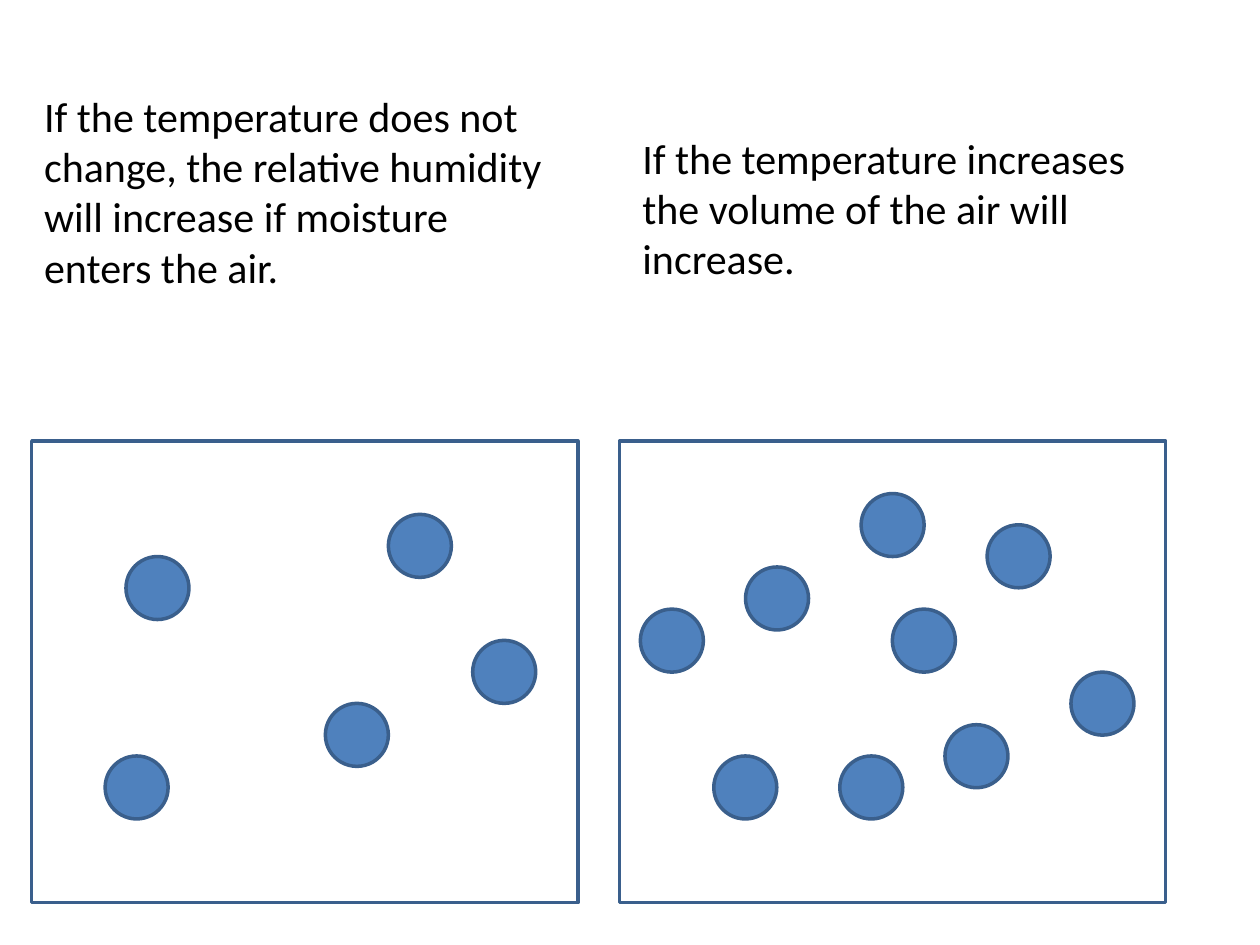
from dataclasses import dataclass

import pptx
import pptx.dml.color
import pptx.enum.shapes
import pptx.enum.text
import pptx.util

Cm = pptx.util.Cm
Pt = pptx.util.Pt
Kind = pptx.enum.shapes.MSO_SHAPE


@dataclass(frozen=True)
class Theme:
    fill: str = "4F81BD"
    edge: str = "3A5F8C"
    ink: str = "000000"
    font: str = "Calibri"
    size: int = 24
    width: int = 2


@dataclass(frozen=True)
class Panel:
    left: float
    drops: tuple[tuple[float, float], ...]


@dataclass(frozen=True)
class Note:
    left: float
    top: float
    height: float
    text: str


THEME = Theme()
BOX_TOP, BOX_WIDTH, BOX_HEIGHT = 8.89, 11.01, 9.31
DROP = 1.27
NOTE_WIDTH = 10.8

PANELS = (
    Panel(0.64, ((2.54, 11.22), (9.53, 12.91), (7.83, 10.37),
                 (2.12, 15.24), (6.56, 14.18))),
    Panel(12.49, ((19.9, 10.58), (14.39, 15.24), (21.59, 13.55),
                  (19.05, 14.61), (15.03, 11.43), (17.36, 9.95),
                  (16.93, 15.24), (17.99, 12.28), (12.91, 12.28))),
)
NOTES = (
    Note(0.64, 1.69, 4.37,
         "If the temperature does not change, the relative humidity "
         "will increase if moisture enters the air."),
    Note(12.7, 2.54, 3.33,
         "If the temperature increases the volume of the air will increase."),
)


def color(code: str) -> pptx.dml.color.RGBColor:
    return pptx.dml.color.RGBColor.from_string(code)


def draw_shape(slide, kind, left: float, top: float, width: float,
               height: float, fill: str | None = None) -> None:
    shape = slide.shapes.add_shape(kind, Cm(left), Cm(top), Cm(width), Cm(height))
    shape.shadow.inherit = False
    if fill:
        shape.fill.solid()
        shape.fill.fore_color.rgb = color(fill)
    else:
        shape.fill.background()
    shape.line.color.rgb = color(THEME.edge)
    shape.line.width = Pt(THEME.width)


def draw_panel(slide, panel: Panel) -> None:
    draw_shape(slide, Kind.RECTANGLE, panel.left, BOX_TOP, BOX_WIDTH, BOX_HEIGHT)
    for left, top in panel.drops:
        draw_shape(slide, Kind.OVAL, left, top, DROP, DROP, THEME.fill)


def draw_note(slide, note: Note) -> None:
    box = slide.shapes.add_textbox(Cm(note.left), Cm(note.top),
                                   Cm(NOTE_WIDTH), Cm(note.height))
    frame = box.text_frame
    frame.text = note.text
    frame.word_wrap = True
    frame.auto_size = pptx.enum.text.MSO_AUTO_SIZE.SHAPE_TO_FIT_TEXT
    font = frame.paragraphs[0].runs[0].font
    font.name = THEME.font
    font.size = Pt(THEME.size)
    font.color.rgb = color(THEME.ink)


def main() -> None:
    deck = pptx.Presentation()
    deck.slide_width = Cm(25.4)
    deck.slide_height = Cm(19.05)
    slide = deck.slides.add_slide(deck.slide_layouts[6])
    for panel in PANELS:
        draw_panel(slide, panel)
    for note in NOTES:
        draw_note(slide, note)
    deck.save("out.pptx")


if __name__ == "__main__":
    main()
